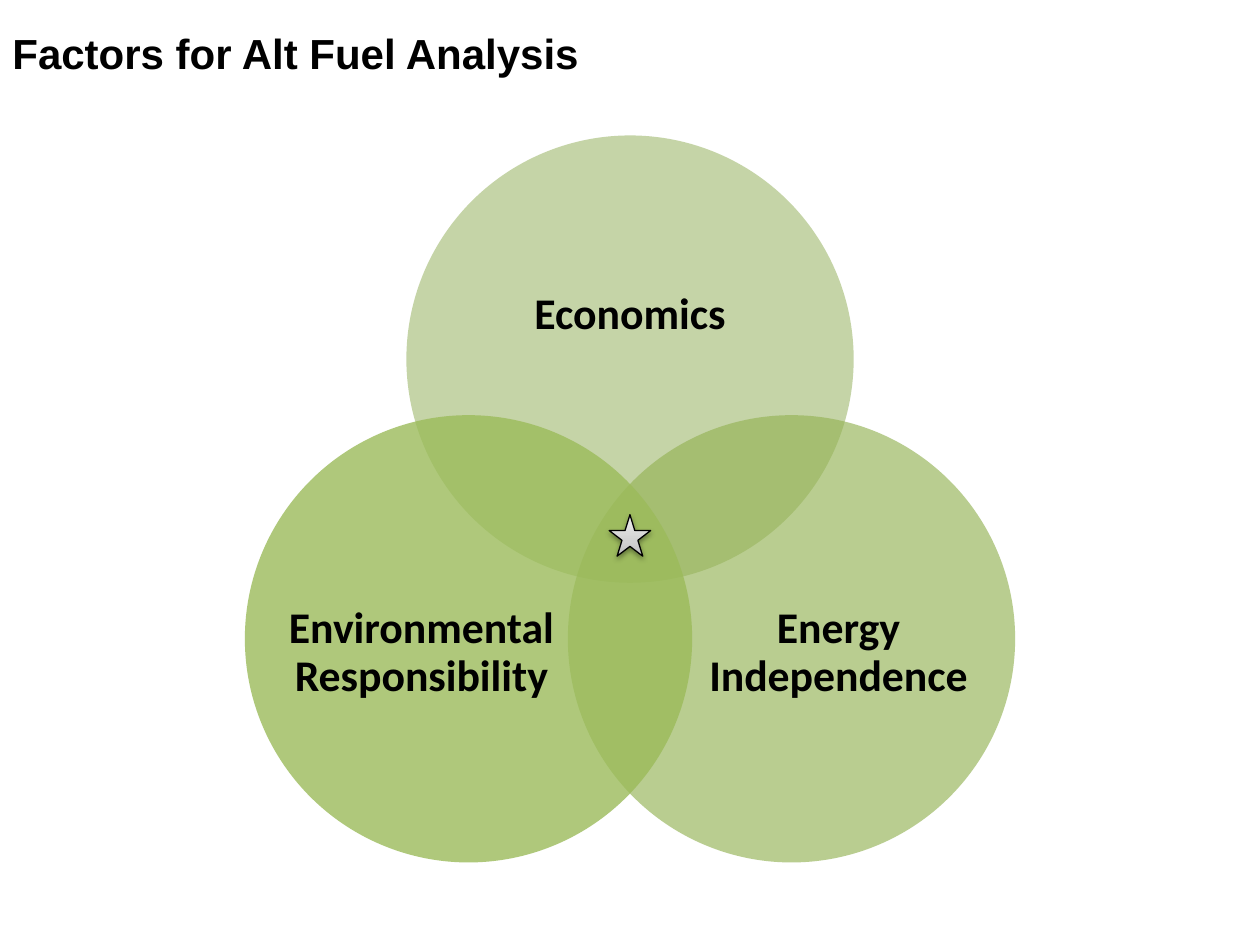
from math import cos, radians, sin

from lxml import etree
from pptx import Presentation
from pptx.dml.color import RGBColor
from pptx.enum.shapes import MSO_SHAPE as Shape
from pptx.enum.text import MSO_ANCHOR as Anchor, PP_ALIGN as Align
from pptx.oxml.ns import qn
from pptx.util import Inches, Pt

COLORS = {
    "text": "000000",
    "economics": "8DAA51",
    "energy": "94B355",
    "environment": "9BBB5A",
    "star_line": "000000",
    "shadow": "000000",
}
TITLE = "Factors for Alt Fuel Analysis"
FACTORS = [
    ("Economics", "economics", 50, -90, (3.7, 1.7, 2.6, 1.6)),
    ("Energy Independence", "energy", 65, 30, (5.59, 4.21, 2.13, 1.95)),
    ("Environmental Responsibility", "environment", 80, 150, (2.28, 4.21, 2.13, 1.95)),
]
STAR_STOPS = [(0, "BDBDBD"), (35, "D1D1D1"), (100, "EEEEEE")]

CENTER_X, CENTER_Y, ORBIT = 5, 4.33, 1.48
CIRCLE_SIZE = 3.55
STAR_Y, STAR_SIZE = 4.25, 0.33


def rgb(name):
    return RGBColor.from_string(COLORS[name])


def add_color(parent, hex_color, opacity=None):
    color = etree.SubElement(parent, qn("a:srgbClr"), val=hex_color)
    if opacity is not None:
        etree.SubElement(color, qn("a:alpha"), val=str(opacity * 1000))


def add_centered(slide, kind, x, y, size):
    shape = slide.shapes.add_shape(
        kind, Inches(x - size / 2), Inches(y - size / 2), Inches(size), Inches(size))
    shape.shadow.inherit = False
    return shape


def add_text(slide, text, box, font_name, size):
    shape = slide.shapes.add_textbox(*[Inches(value) for value in box])
    frame = shape.text_frame
    frame.text = text
    frame.word_wrap = True
    frame.vertical_anchor = Anchor.MIDDLE
    font = frame.paragraphs[0].runs[0].font
    font.name, font.size, font.bold = font_name, Pt(size), True
    font.color.rgb = rgb("text")
    return frame


def add_factor(slide, text, color, opacity, angle, box):
    x = CENTER_X + ORBIT * cos(radians(angle))
    y = CENTER_Y + ORBIT * sin(radians(angle))
    circle = add_centered(slide, Shape.OVAL, x, y, CIRCLE_SIZE)
    circle.fill.solid()
    circle.fill.fore_color.rgb = rgb(color)
    solid = circle._element.spPr.find(qn("a:solidFill"))
    etree.SubElement(solid[0], qn("a:alpha"), val=str(opacity * 1000))
    circle.line.fill.background()

    frame = add_text(slide, text, box, "Calibri", 25)
    frame.margin_left = frame.margin_right = frame.margin_top = frame.margin_bottom = 0
    paragraph = frame.paragraphs[0]
    paragraph.alignment = Align.CENTER
    paragraph.line_spacing = 0.9


def add_star(slide):
    star = add_centered(slide, Shape.STAR_5_POINT, CENTER_X, STAR_Y, STAR_SIZE)
    star.line.color.rgb = rgb("star_line")
    star.line.width = Pt(0.75)
    star.fill.gradient()
    properties = star._element.spPr
    gradient = properties.find(qn("a:gradFill"))
    stops = gradient.find(qn("a:gsLst"))
    for stop in list(stops):
        stops.remove(stop)
    for position, color in STAR_STOPS:
        add_color(etree.SubElement(stops, qn("a:gs"), pos=str(position * 1000)), color)
    direction = gradient.find(qn("a:lin"))
    direction.set("ang", str(270 * 60000))
    direction.set("scaled", "0")
    shadow = etree.SubElement(
        properties.find(qn("a:effectLst")), qn("a:outerShdw"),
        blurRad=str(Pt(3.1)), dist=str(Pt(1.6)), dir=str(90 * 60000), rotWithShape="0")
    add_color(shadow, COLORS["shadow"], 38)


def main():
    presentation = Presentation()
    presentation.slide_width, presentation.slide_height = Inches(10), Inches(7.5)
    slide = presentation.slides.add_slide(presentation.slide_layouts[6])
    add_text(slide, TITLE, (0, 0, 7.58, 0.83), "Arial", 24)
    for factor in FACTORS:
        add_factor(slide, *factor)
    add_star(slide)
    presentation.save("out.pptx")


if __name__ == "__main__":
    main()
